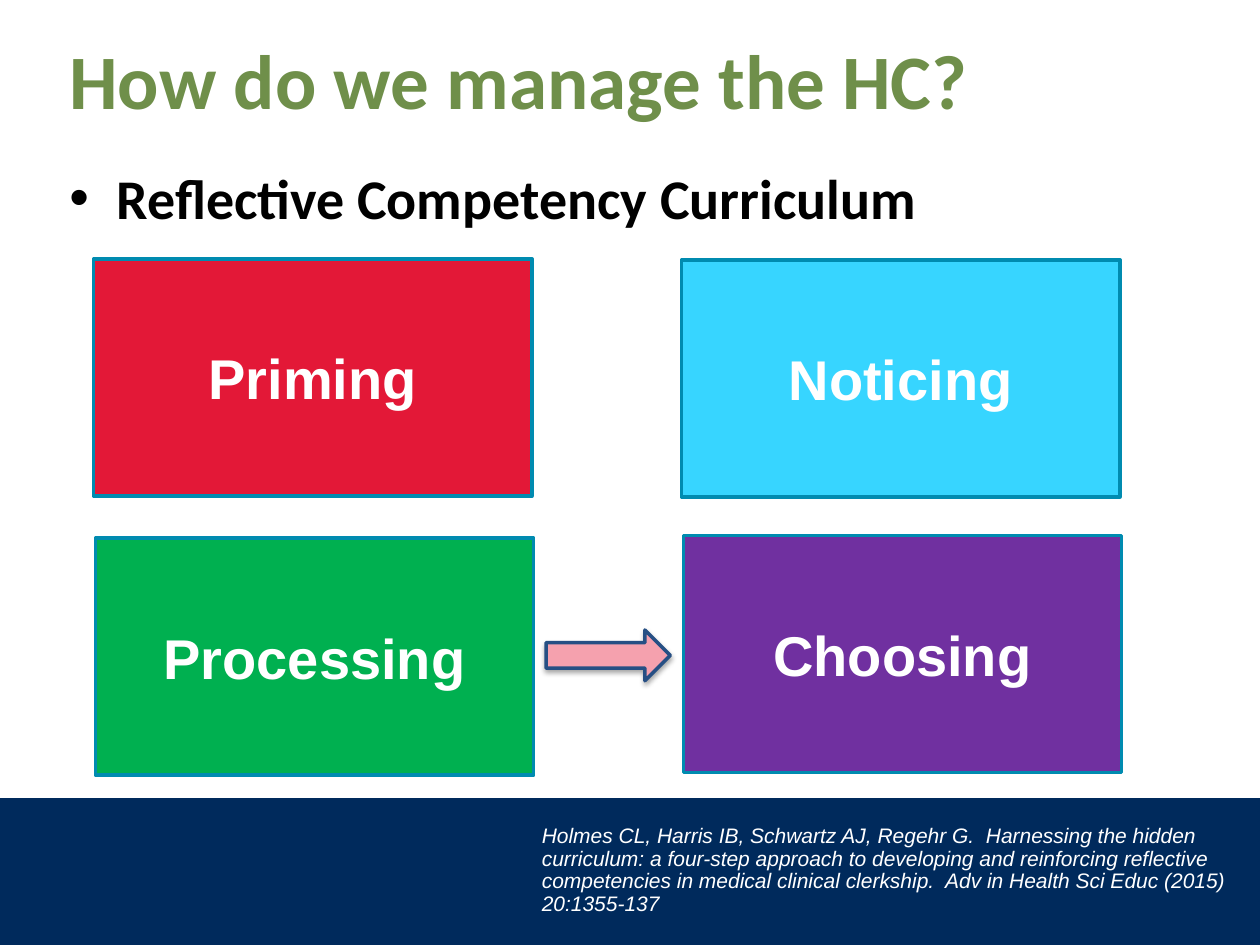
import pptx
import pptx.dml.color
import pptx.enum.shapes
import pptx.enum.text
import pptx.oxml
import pptx.oxml.ns
import pptx.util

Pt = pptx.util.Pt
SHAPES = pptx.enum.shapes.MSO_SHAPE
ALIGN = pptx.enum.text.PP_ALIGN
ANCHOR = pptx.enum.text.MSO_ANCHOR
NAMESPACE = 'xmlns:a="http://schemas.openxmlformats.org/drawingml/2006/main"'
COLORS = {
    "white": "FFFFFF", "black": "000000", "navy": "002A5C", "olive": "6F8F4A",
    "red": "E31837", "cyan": "37D5FF", "green": "00B050", "purple": "7030A0",
    "teal": "008BB0", "pink": "F5A1AE", "blue": "264F84",
}


class SlideBuilder:
    """Holds the style and the current slide and adds each kind of element."""

    margin = 3.6
    line_width = 2

    def __init__(self, slide):
        self.slide = slide

    def color(self, name):
        return pptx.dml.color.RGBColor.from_string(COLORS[name])

    def label(self, shape, text, size, font, color, bold=False, italic=False,
              align=ALIGN.LEFT, anchor=ANCHOR.TOP):
        frame = shape.text_frame
        frame.text = text
        frame.word_wrap = True
        frame.vertical_anchor = anchor
        frame.margin_left = frame.margin_right = Pt(self.margin)
        frame.margin_top = frame.margin_bottom = Pt(self.margin)
        paragraph = frame.paragraphs[0]
        paragraph.alignment = align
        for run in paragraph.runs:
            run.font.size = Pt(size)
            run.font.name = font
            run.font.bold = bold
            run.font.italic = italic
            run.font.color.rgb = self.color(color)
        return paragraph

    def text(self, bounds, text, size, font, color, **style):
        shape = self.slide.shapes.add_textbox(*map(Pt, bounds))
        return self.label(shape, text, size, font, color, **style)

    def bullet(self, bounds, text, size, font, color, indent, **style):
        paragraph = self.text(bounds, text, size, font, color, **style)
        properties = paragraph._p.get_or_add_pPr()
        properties.set("marL", str(Pt(indent)))
        properties.set("indent", str(-Pt(indent)))
        for element in ('<a:buFont {} typeface="Arial"/>', '<a:buChar {} char="•"/>'):
            properties.append(pptx.oxml.parse_xml(element.format(NAMESPACE)))

    def shape(self, kind, bounds, fill, line=None):
        shape = self.slide.shapes.add_shape(kind, *map(Pt, bounds))
        shape.shadow.inherit = False
        shape.fill.solid()
        shape.fill.fore_color.rgb = self.color(fill)
        if line:
            shape.line.color.rgb = self.color(line)
            shape.line.width = Pt(self.line_width)
        else:
            shape.line.fill.background()
        return shape

    def step(self, bounds, text, fill):
        shape = self.shape(SHAPES.RECTANGLE, bounds, fill, "teal")
        self.label(shape, text, 32, "Arial", "white", bold=True,
                   align=ALIGN.CENTER, anchor=ANCHOR.MIDDLE)

    def arrow(self, bounds, fill, line):
        shape = self.shape(SHAPES.RIGHT_ARROW, bounds, fill, line)
        effects = shape._element.spPr.find(pptx.oxml.ns.qn("a:effectLst"))
        effects.append(pptx.oxml.parse_xml(
            f'<a:outerShdw {NAMESPACE} blurRad="{Pt(3)}" dist="{Pt(1.8)}" '
            f'dir="5400000" rotWithShape="0"><a:srgbClr val="{COLORS["black"]}">'
            '<a:alpha val="35000"/></a:srgbClr></a:outerShdw>'))


def main():
    presentation = pptx.Presentation()
    presentation.slide_width = Pt(720)
    presentation.slide_height = Pt(540)
    builder = SlideBuilder(presentation.slides.add_slide(presentation.slide_layouts[6]))

    builder.shape(SHAPES.RECTANGLE, (0, 456, 720, 84), "navy")
    citation = builder.text(
        (306, 468, 403, 60),
        "Holmes CL, Harris IB, Schwartz AJ, Regehr G.  Harnessing the hidden "
        "curriculum: a four-step approach to developing and reinforcing reflective "
        "competencies in medical clinical clerkship.  Adv in Health Sci Educ (2015) "
        "20:1355-137",
        12, "Arial", "white", italic=True)
    citation.line_spacing = 0.9

    builder.text((36, 0, 648, 90), "How do we manage the HC?", 44, "Calibri",
                 "olive", bold=True, anchor=ANCHOR.MIDDLE)
    builder.bullet((36, 90, 648, 356.5), "Reflective Competency Curriculum", 32,
                   "Calibri", "black", 27, bold=True)

    steps = [
        ("Priming", "red", 53.5, 148),
        ("Noticing", "cyan", 389.5, 148.5),
        ("Processing", "green", 54.5, 307.5),
        ("Choosing", "purple", 390.5, 306),
    ]
    for text, fill, left, top in steps:
        builder.step((left, top, 250.5, 135.5), text, fill)
    builder.arrow((312, 360, 71, 29), "pink", "blue")

    presentation.save("out.pptx")


if __name__ == "__main__":
    main()
